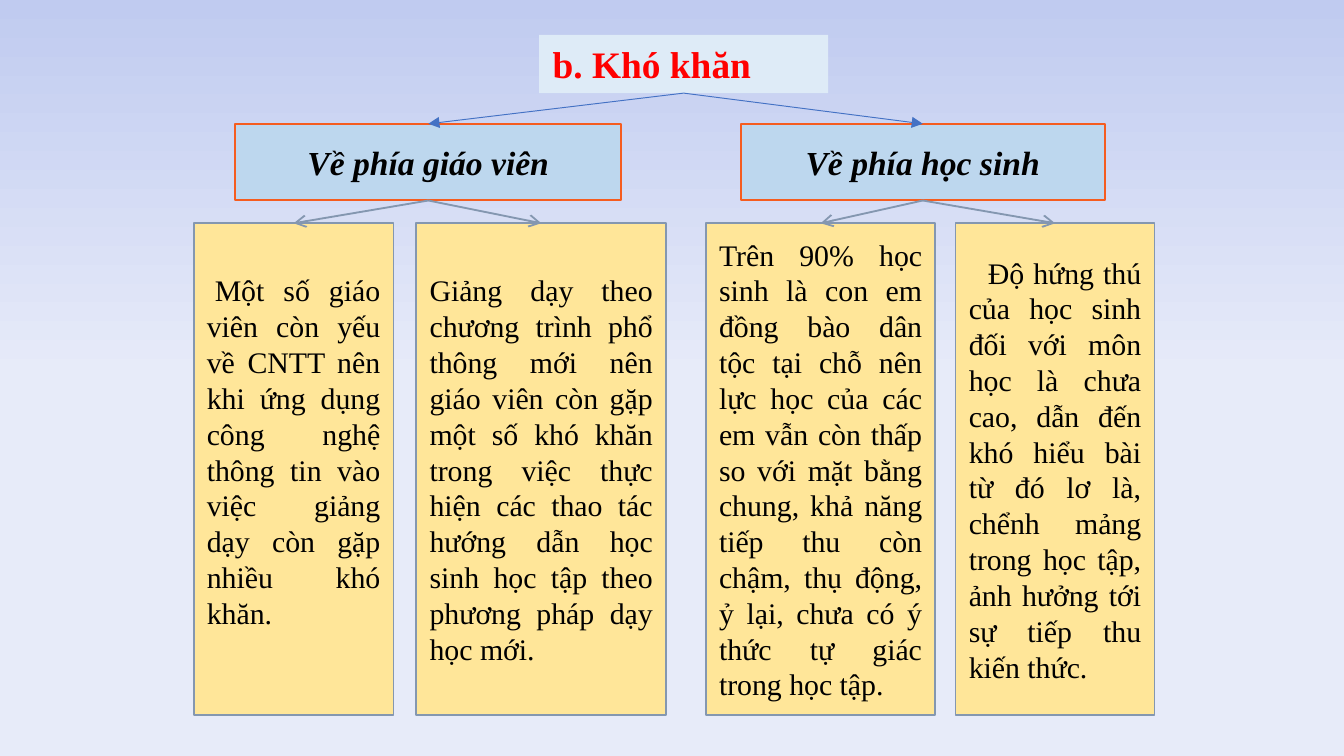
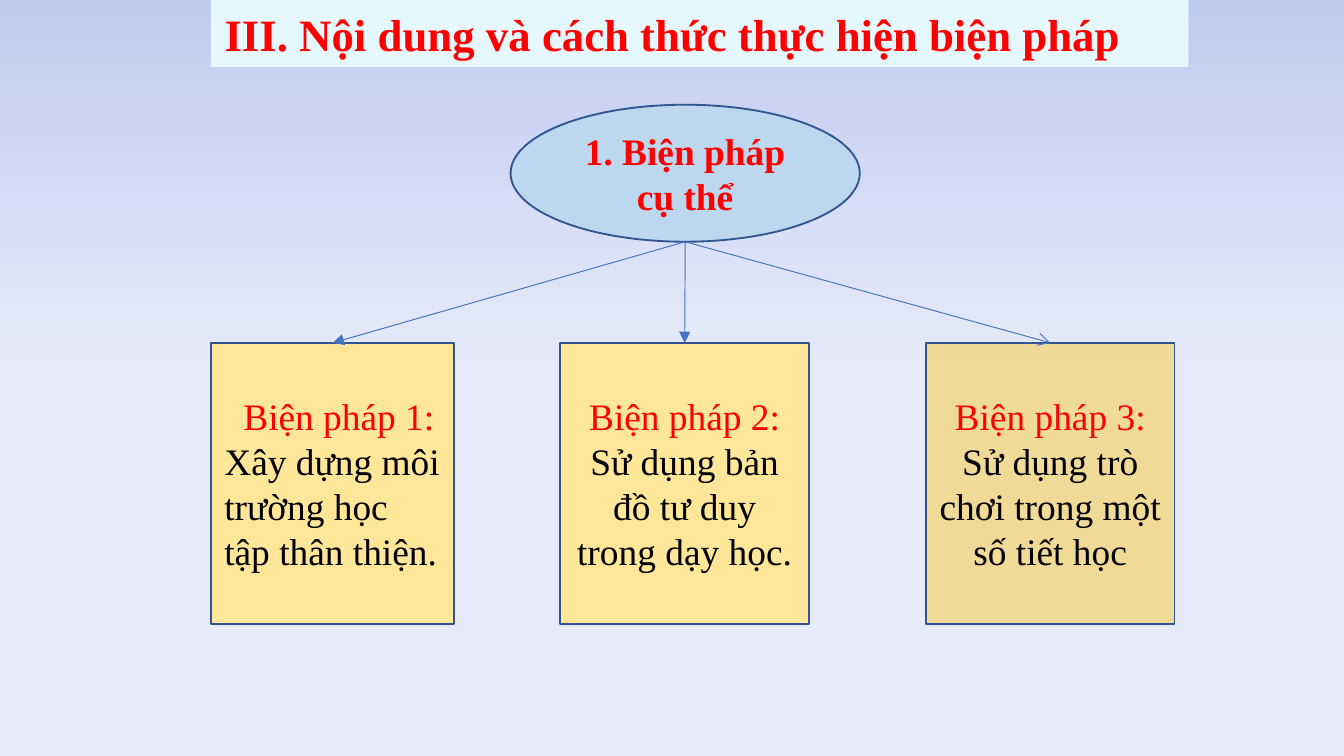
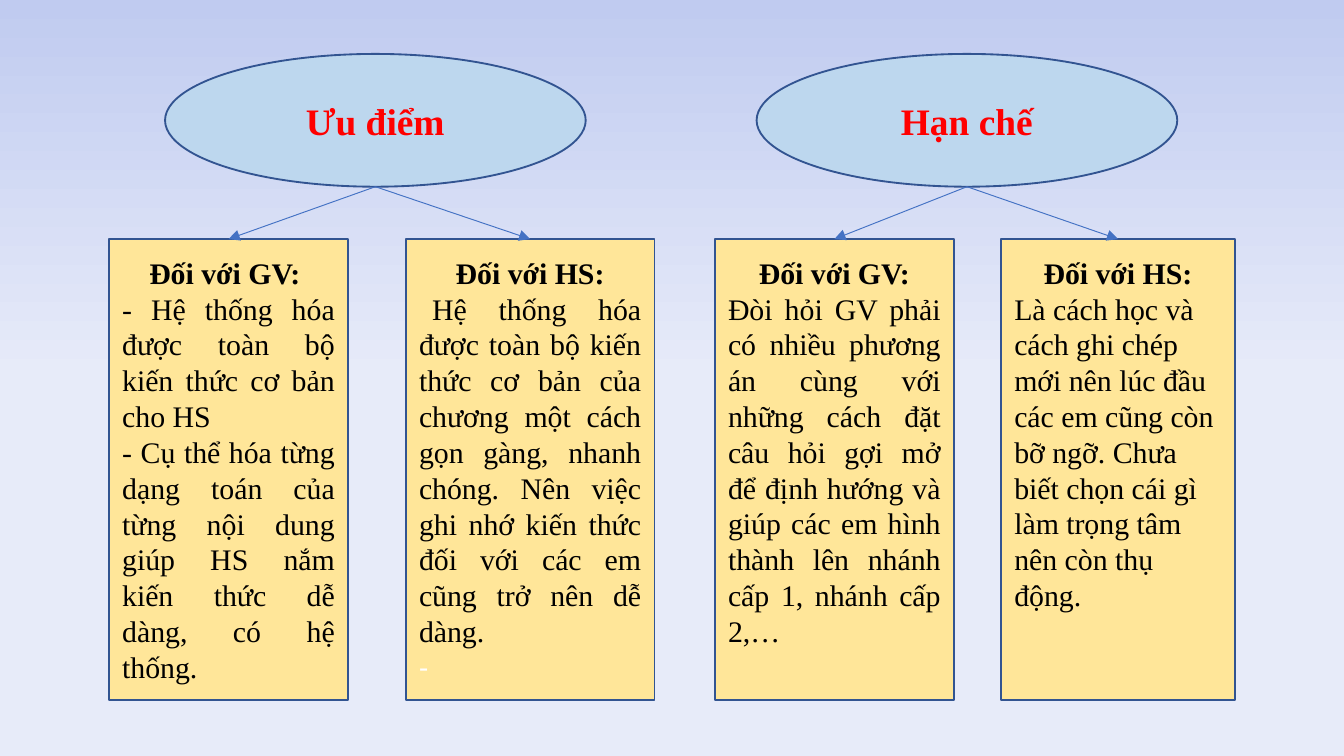
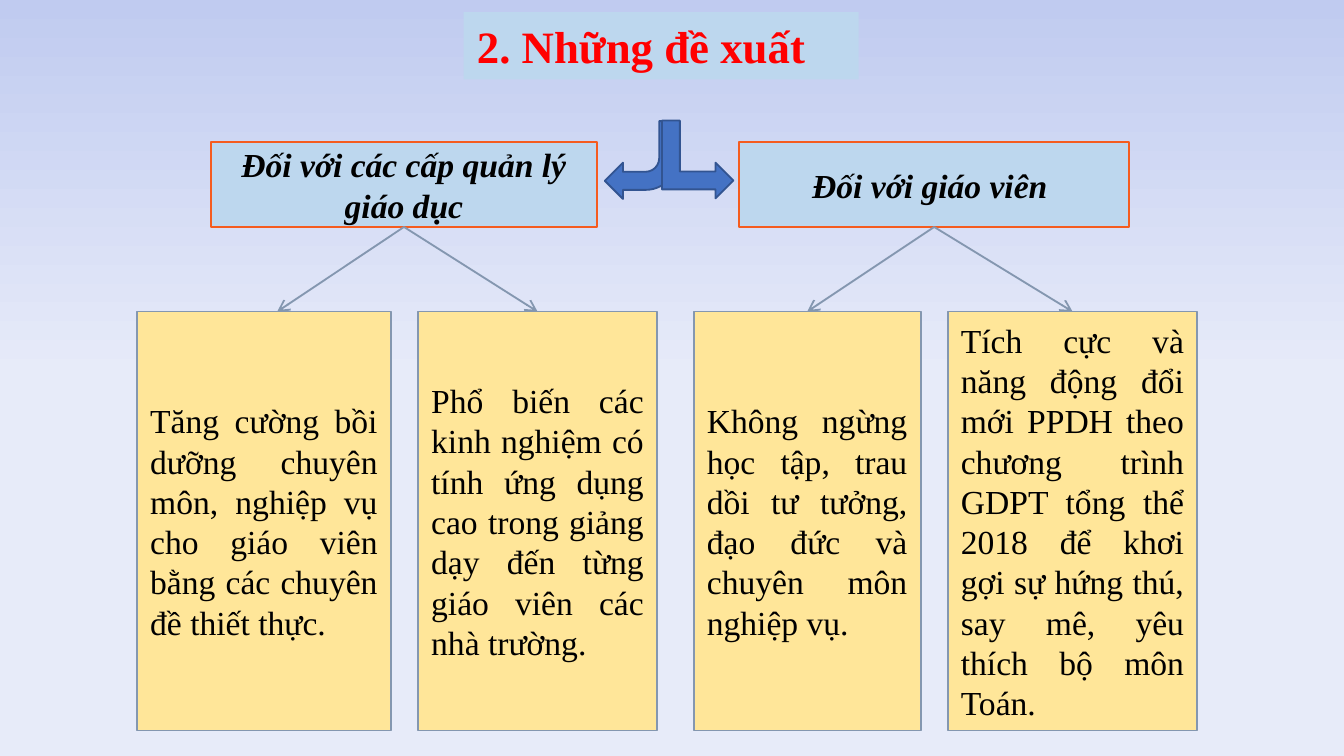
from lxml import etree
from pptx import Presentation
from pptx.dml.color import RGBColor
from pptx.enum.shapes import MSO_CONNECTOR, MSO_SHAPE
from pptx.enum.text import MSO_ANCHOR, MSO_AUTO_SIZE, PP_ALIGN
from pptx.oxml.ns import qn
from pptx.util import Cm, Pt

RECT, OVAL = MSO_SHAPE.RECTANGLE, MSO_SHAPE.OVAL
BENT, BENT_UP = MSO_SHAPE.BENT_ARROW, MSO_SHAPE.BENT_UP_ARROW
LEFT, CENTER, JUSTIFY = PP_ALIGN.LEFT, PP_ALIGN.CENTER, PP_ALIGN.JUSTIFY
TOP, MIDDLE = MSO_ANCHOR.TOP, MSO_ANCHOR.MIDDLE
STRAIGHT = MSO_CONNECTOR.STRAIGHT
TITLE_ONLY, BLANK = 5, 6

FONT = "Times New Roman"
BLACK = RGBColor(0x00, 0x00, 0x00)
WHITE = RGBColor(0xFF, 0xFF, 0xFF)
RED = RGBColor(0xFF, 0x00, 0x00)
SKY_TOP = RGBColor(0xC0, 0xCB, 0xF0)
SKY_BOTTOM = RGBColor(0xE7, 0xEB, 0xF9)
LIGHT_BLUE = RGBColor(0xBD, 0xD7, 0xEE)
PALE_BLUE = RGBColor(0xDE, 0xEB, 0xF7)
ICE_BLUE = RGBColor(0xE5, 0xF8, 0xFE)
BLUE = RGBColor(0x44, 0x72, 0xC4)
NAVY = RGBColor(0x32, 0x54, 0x91)
GREY_BLUE = RGBColor(0x84, 0x97, 0xB0)
ORANGE = RGBColor(0xF5, 0x5C, 0x1F)
YELLOW = RGBColor(0xFF, 0xE6, 0x99)
GOLD = RGBColor(0xFF, 0xC0, 0x00)

LINE_PITCH = 0.0424  # cm of line height per point of type
INSET = 0.13


def set_background(prs):
    """Vertical gradient, shared by all slides through the master."""
    fill = prs.slide_master.background.fill
    fill.gradient()
    fill.gradient_angle = 270
    stops = zip(fill.gradient_stops, (SKY_TOP, SKY_BOTTOM), (0, 0.5))
    for stop, color, position in stops:
        stop.color.rgb = color
        stop.position = position


def add_par(shape, text, size, color=BLACK, align=CENTER, bold=False,
            italic=False, indent=0, font=FONT):
    """Fill the first paragraph of the shape, or append another one."""
    tf = shape.text_frame
    p = tf.add_paragraph() if tf.text else tf.paragraphs[0]
    p.add_run().text = text
    p.alignment = align
    p.font.name, p.font.size = font, Pt(size)
    p.font.bold, p.font.italic = bold, italic
    p.font.color.rgb = color
    if indent:
        p._p.get_or_add_pPr().set("indent", str(Cm(indent)))
    return p


def add_title(s, text, at, fill, size):
    title = s.shapes.title
    title.left, title.top, title.width, title.height = map(Cm, at)
    title.fill.solid()
    title.fill.fore_color.rgb = fill
    tf = title.text_frame
    tf.word_wrap, tf.auto_size = True, MSO_AUTO_SIZE.NONE
    tf.vertical_anchor = TOP
    add_par(title, text, size, RED, LEFT, bold=True)
    return title


def add_box(s, kind, at, fill, line):
    sp = s.shapes.add_shape(kind, *map(Cm, at))
    sp.shadow.inherit = False
    sp.fill.solid()
    sp.fill.fore_color.rgb = fill
    sp.line.color.rgb, sp.line.width = line, Pt(1)
    sp.text_frame.word_wrap = True
    sp.text_frame.vertical_anchor = MIDDLE
    return sp


def add_heading(s, text, at):
    sp = add_box(s, RECT, at, LIGHT_BLUE, ORANGE)
    add_par(sp, text, 18, bold=True, italic=True)
    return sp


def add_oval(s, text, at):
    sp = add_box(s, OVAL, at, LIGHT_BLUE, NAVY)
    add_par(sp, text, 20, RED, bold=True)
    return sp


def lift_text(sp, lines, size):
    """Keep room for some lines below the centred text."""
    sp.text_frame.margin_bottom = Cm(INSET + lines * size * LINE_PITCH)


def set_alpha(sp, percent):
    color = sp.fill._xPr.find(qn("a:solidFill"))[0]
    etree.SubElement(color, qn("a:alpha"), val=str(percent * 1000))


def add_arrow(s, parent, child, color, width, head, end_x=None):
    """Line from the parent's bottom to the child's top (its middle, or end_x)."""
    middle = child.left + child.width // 2
    line = s.shapes.add_connector(
        STRAIGHT, parent.left + parent.width // 2, parent.top + parent.height,
        Cm(end_x) if end_x else middle, child.top)
    if parent.is_placeholder or parent.auto_shape_type == RECT:
        line.begin_connect(parent, 2)
    if not end_x:
        line.end_connect(child, 0)
    line.line.color.rgb, line.line.width = color, Pt(width)
    etree.SubElement(line.line._get_or_add_ln(), qn("a:tailEnd"), type=head)
    etree.SubElement(line._element.spPr, qn("a:effectLst"))


def blue_arrow(s, parent, child, head="triangle"):
    add_arrow(s, parent, child, BLUE, 0.5, head)


def grey_arrow(s, parent, child, end_x=None):
    add_arrow(s, parent, child, GREY_BLUE, 1, "arrow", end_x)


def difficulties_slide(prs):
    s = prs.slides.add_slide(prs.slide_layouts[TITLE_ONLY])
    title = add_title(s, "b. Khó khăn", (10.19, 0.66, 5.46, 1.1), PALE_BLUE, 20)
    teacher = add_heading(s, "Về phía giáo viên", (4.45, 2.34, 7.29, 1.45))
    student = add_heading(s, "Về phía học sinh", (14, 2.34, 6.88, 1.45))

    # parent, left, width, first-line indent, lines kept free, text
    cards = [
        (teacher, 3.66, 3.78, 0.15, 1,
         "Một số giáo viên còn yếu về CNTT nên khi ứng dụng công nghệ thông tin "
         "vào việc giảng dạy còn gặp nhiều khó khăn."),
        (teacher, 7.87, 4.72, 0, 0,
         "Giảng dạy theo chương trình phổ thông mới nên giáo viên còn gặp một số "
         "khó khăn trong việc thực hiện các thao tác hướng dẫn học sinh học tập "
         "theo phương pháp dạy học mới."),
        (student, 13.34, 4.34, 0, 0,
         "Trên 90% học sinh là con em đồng bào dân tộc tại chỗ nên lực học của "
         "các em vẫn còn thấp so với mặt bằng chung, khả năng tiếp thu còn chậm, "
         "thụ động, ỷ lại, chưa có ý thức tự giác trong học tập."),
        (student, 18.06, 3.76, 0.36, 0,
         "Độ hứng thú của học sinh đối với môn học là chưa cao, dẫn đến khó hiểu "
         "bài từ đó lơ là, chểnh mảng trong học tập, ảnh hưởng tới sự tiếp thu "
         "kiến thức."),
    ]
    for parent, left, width, indent, free, text in cards:
        card = add_box(s, RECT, (left, 4.22, width, 9.3), YELLOW, GREY_BLUE)
        add_par(card, text, 16, align=JUSTIFY, indent=indent)
        lift_text(card, free, 16)
        grey_arrow(s, parent, card)
    for heading in (teacher, student):
        blue_arrow(s, title, heading)


def measures_slide(prs):
    s = prs.slides.add_slide(prs.slide_layouts[TITLE_ONLY])
    add_title(s, "III. Nội dung và cách thức thực hiện biện pháp",
              (3.99, 0, 18.47, 1.27), ICE_BLUE, 24)
    oval = add_oval(s, "1. Biện pháp cụ thể", (9.65, 1.98, 6.6, 2.59))

    # left, width, fill, alignment, indent, arrowhead, text
    cards = [
        (3.99, 4.6, YELLOW, LEFT, 0.36, "triangle",
         "Xây dựng môi trường học tập thân thiện."),
        (10.59, 4.7, YELLOW, CENTER, 0, "triangle",
         "Sử dụng bản đồ tư duy trong dạy học."),
        (17.5, 4.7, GOLD, CENTER, 0, "arrow",
         "Sử dụng trò chơi trong một số tiết học"),
    ]
    for number, (left, width, fill, align, indent, head, text) in enumerate(cards, 1):
        card = add_box(s, RECT, (left, 6.48, width, 5.31), fill, NAVY)
        p = add_par(card, f"Biện pháp {number}: ", 20, RED, align, indent=indent)
        r = p.add_run()
        r.text = text
        r.font.color.rgb = BLACK
        if fill == GOLD:
            set_alpha(card, 39)
        blue_arrow(s, oval, card, head)


def pros_cons_slide(prs):
    s = prs.slides.add_slide(prs.slide_layouts[BLANK])
    pros = add_oval(s, "Ưu điểm", (3.12, 1.02, 7.95, 2.51))
    cons = add_oval(s, "Hạn chế", (14.3, 1.02, 7.95, 2.51))

    # parent, left, width, heading, alignment, indent, lines kept free, texts
    cards = [
        (pros, 2.06, 4.52, "Đối với GV: ", JUSTIFY, 0, 0,
         ["- Hệ thống hóa được toàn bộ kiến thức cơ bản cho HS",
          "- Cụ thể hóa từng dạng toán của từng nội dung giúp HS nắm kiến thức "
          "dễ dàng, có hệ thống."]),
        (pros, 7.67, 4.7, "Đối với HS:", JUSTIFY, 0.25, 0,
         ["Hệ thống hóa được toàn bộ kiến thức cơ bản của chương một cách gọn "
          "gàng, nhanh chóng. Nên việc ghi nhớ kiến thức đối với các em cũng trở "
          "nên dễ dàng."]),
        (cons, 13.51, 4.52, "Đối với GV:", JUSTIFY, 0, 1,
         ["Đòi hỏi GV phải có nhiều phương án cùng với những cách đặt câu hỏi "
          "gợi mở để định hướng và giúp các em hình thành lên nhánh cấp 1, nhánh "
          "cấp 2,…"]),
        (cons, 18.92, 4.42, "Đối với HS:", LEFT, 0, 2,
         ["Là cách học và cách ghi chép mới nên lúc đầu các em cũng còn bỡ ngỡ. "
          "Chưa biết chọn cái gì làm trọng tâm nên còn thụ động."]),
    ]
    for parent, left, width, heading, align, indent, free, texts in cards:
        card = add_box(s, RECT, (left, 4.52, width, 8.71), YELLOW, NAVY)
        add_par(card, heading, 16, bold=True)
        for text in texts:
            add_par(card, text, 16, align=align, indent=indent)
        if indent:  # white dash that closes the indented card
            add_par(card, "- ", 16, WHITE, JUSTIFY, font="Calibri")
        lift_text(card, free, 16)
        blue_arrow(s, parent, card)


def proposals_slide(prs):
    s = prs.slides.add_slide(prs.slide_layouts[TITLE_ONLY])
    add_title(s, "2. Những đề xuất", (8.76, 0.23, 7.47, 1.27), LIGHT_BLUE, 24)
    managers = add_heading(s, "Đối với các cấp quản lý giáo dục",
                           (3.99, 2.69, 7.29, 1.6))
    teachers = add_heading(s, "Đối với giáo viên ", (13.97, 2.69, 7.37, 1.6))

    # parent, left, width, arrow end when off the middle, text
    cards = [
        (managers, 2.59, 4.8, 5.24,
         "Tăng cường bồi dưỡng chuyên môn, nghiệp vụ cho giáo viên bằng các "
         "chuyên đề thiết thực."),
        (managers, 7.9, 4.52, None,
         "Phổ biến các kinh nghiệm có tính ứng dụng cao trong giảng dạy đến từng "
         "giáo viên các nhà trường."),
        (teachers, 13.11, 4.29, None,
         "Không ngừng học tập, trau dồi tư tưởng, đạo đức và chuyên môn nghiệp vụ."),
        (teachers, 17.91, 4.72, None,
         "Tích cực và năng động đổi mới PPDH theo chương trình GDPT tổng thể 2018 "
         "để khơi gợi sự hứng thú, say mê, yêu thích bộ môn Toán."),
    ]
    for parent, left, width, end_x, text in cards:
        card = add_box(s, RECT, (left, 5.89, width, 7.92), YELLOW, GREY_BLUE)
        add_par(card, text, 18, align=JUSTIFY)
        grey_arrow(s, parent, card, end_x)

    # Bent arrows between the headings
    to_managers = add_box(s, BENT, (11.43, 2.29, 1.37, 1.47), BLUE, NAVY)
    to_managers.rotation = 180
    to_teachers = add_box(s, BENT_UP, (12.45, 2.34, 1.47, 1.35), BLUE, NAVY)
    to_teachers.rotation = 90


def main():
    prs = Presentation()
    prs.slide_width, prs.slide_height = Cm(25.4), Cm(14.29)
    set_background(prs)
    difficulties_slide(prs)
    measures_slide(prs)
    pros_cons_slide(prs)
    proposals_slide(prs)
    prs.save("out.pptx")


if __name__ == "__main__":
    main()
